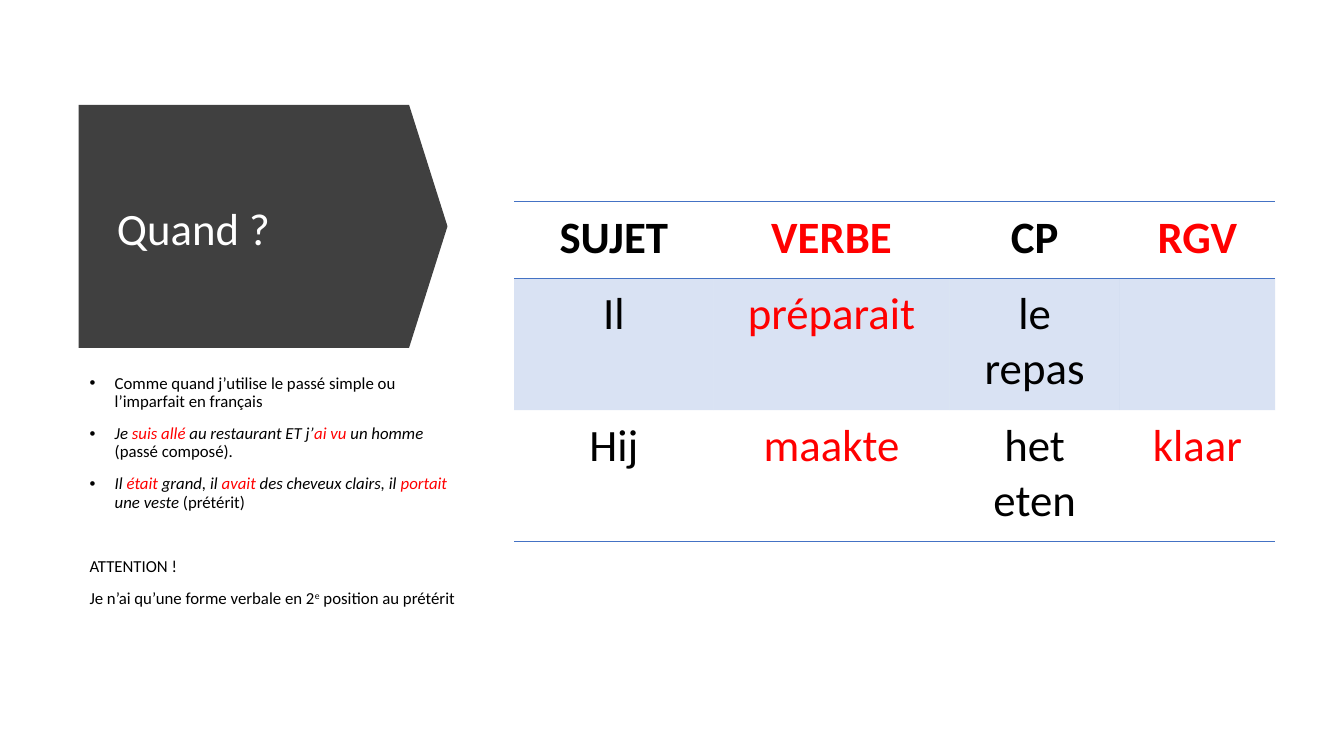
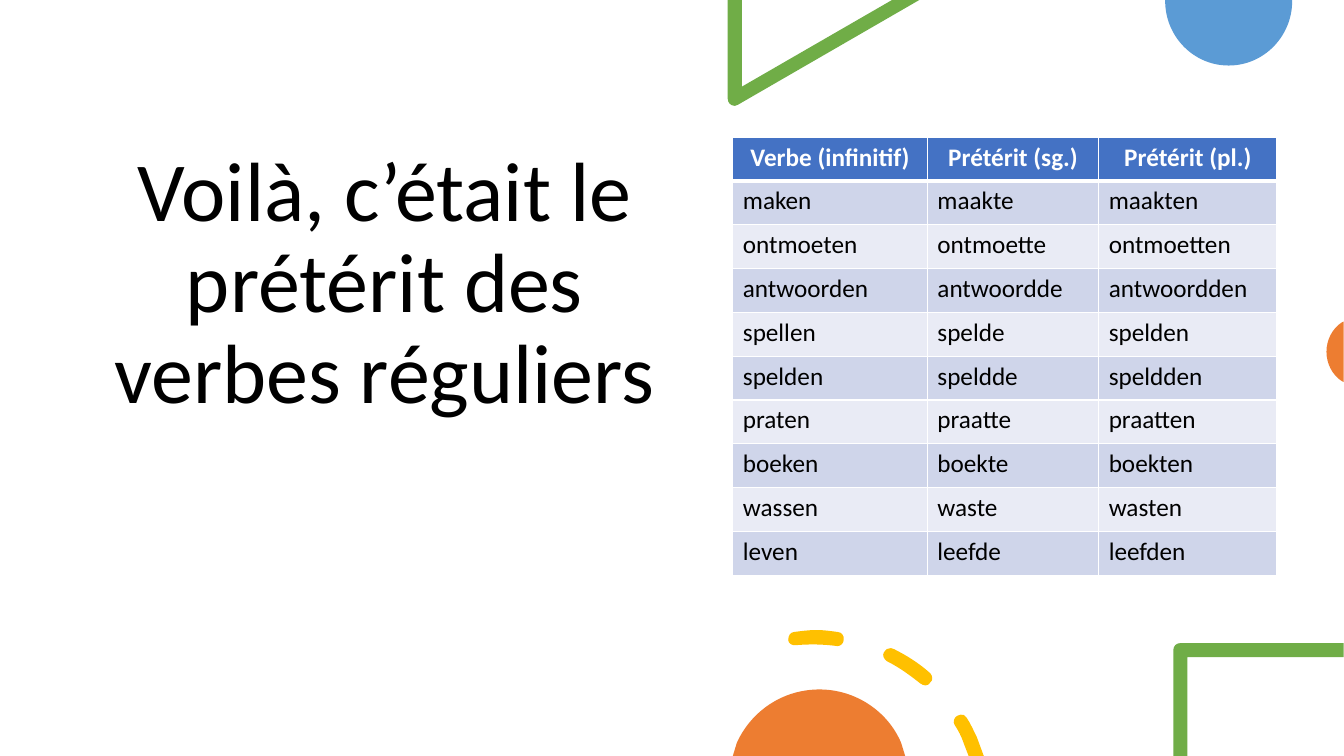
import lxml.etree
import pptx
import pptx.dml.color
import pptx.enum.shapes
import pptx.enum.text
import pptx.oxml.ns
import pptx.util

Inches = pptx.util.Inches
Pt = pptx.util.Pt
qn = pptx.oxml.ns.qn
ALIGN = pptx.enum.text.PP_ALIGN
ANCHOR = pptx.enum.text.MSO_ANCHOR

FONT = "Calibri"
COLORS = {
    "black": "000000",
    "white": "FFFFFF",
    "red": "FF0000",
    "charcoal": "404040",
    "blue": "4472C4",
    "dark band": "CFD5EA",
    "light band": "E9EBF5",
    "green": "70AD47",
    "sky": "5B9BD5",
    "orange": "ED7D31",
    "gold": "FFC000",
}
NO_TABLE_STYLE = "{2D5ABB26-0587-4C30-8999-92F81FD0307C}"

RULES = [
    [("Comme quand j’utilise le passé simple ou l’imparfait en français", "")],
    [("Je ", "i"), ("suis allé ", "ir"), ("au restaurant ET j’", "i"), ("ai vu ", "ir"),
     ("un homme ", "i"), ("(passé composé).", "")],
    [("Il ", "i"), ("était", "ir"), (" grand, il ", "i"), ("avait", "ir"),
     (" des cheveux clairs, il ", "i"), ("portait", "ir"), (" une veste ", "i"), ("(prétérit)", "")],
]
WARNING = [
    [("ATTENTION !", "")],
    [("Je n’ai qu’une forme verbale en 2", ""), ("e", "s"), (" position au prétérit", "")],
]
SENTENCES = [
    ["SUJET", "VERBE", "CP", "RGV"],
    ["Il", "préparait", "le repas", ""],
    ["Hij", "maakte", "het eten", "klaar"],
]
VERBS = [
    ["Verbe (infinitif)", "Prétérit (sg.)", "Prétérit (pl.)"],
    ["maken", "maakte", "maakten"],
    ["ontmoeten", "ontmoette", "ontmoetten"],
    ["antwoorden", "antwoordde", "antwoordden"],
    ["spellen", "spelde", "spelden"],
    ["spelden", "speldde", "speldden"],
    ["praten", "praatte", "praatten"],
    ["boeken", "boekte", "boekten"],
    ["wassen", "waste", "wasten"],
    ["leven", "leefde", "leefden"],
]

ORNAMENTS = [
    ("green", [[(7.22, 0), (7.36, 0), (7.36, 0.86), (8.85, 0), (9.12, 0), (7.32, 1.04),
                (7.31, 1.05, 7.3, 1.05, 7.29, 1.05), (7.25, 1.05, 7.22, 1.02, 7.22, 0.98)]]),
    ("sky", [[(11.56, 0), (12.82, 0), (12.82, 0.01), (12.82, 0.36, 12.54, 0.65, 12.19, 0.65),
              (11.84, 0.65, 11.56, 0.36, 11.56, 0.01)]]),
    ("orange", [[(13.33, 3.19), (13.33, 3.79), (13.31, 3.78),
                 (13.22, 3.72, 13.16, 3.61, 13.16, 3.49),
                 (13.16, 3.37, 13.22, 3.26, 13.31, 3.2)]]),
    ("gold", [
        [(9.53, 7.09), (9.55, 7.08, 9.58, 7.1, 9.59, 7.12), (9.63, 7.18, 9.66, 7.25, 9.69, 7.31),
         (9.76, 7.5), (9.61, 7.5), (9.56, 7.37), (9.54, 7.31, 9.51, 7.25, 9.47, 7.19),
         (9.45, 7.16, 9.47, 7.11, 9.5, 7.1), (9.51, 7.09, 9.52, 7.09, 9.53, 7.09)],
        [(8.84, 6.43), (8.85, 6.43, 8.86, 6.43, 8.87, 6.44), (8.99, 6.5, 9.12, 6.58, 9.23, 6.68),
         (9.25, 6.7, 9.26, 6.75, 9.23, 6.77), (9.22, 6.79, 9.2, 6.8, 9.18, 6.8),
         (9.16, 6.8, 9.15, 6.79, 9.13, 6.78), (9.03, 6.7, 8.92, 6.62, 8.8, 6.56),
         (8.77, 6.54, 8.75, 6.5, 8.77, 6.47), (8.78, 6.44, 8.81, 6.43, 8.84, 6.43)],
        [(8.1, 6.25), (8.17, 6.25, 8.24, 6.26, 8.31, 6.27), (8.35, 6.27, 8.38, 6.31, 8.37, 6.35),
         (8.37, 6.38, 8.34, 6.41, 8.31, 6.41), (8.16, 6.39, 8.03, 6.39, 7.9, 6.4),
         (7.86, 6.41, 7.82, 6.38, 7.82, 6.35), (7.82, 6.31, 7.84, 6.27, 7.88, 6.27),
         (7.95, 6.26, 8.03, 6.25, 8.1, 6.25)],
    ]),
    ("orange", [[(8.13, 6.84), (8.49, 6.84, 8.81, 7.06, 8.94, 7.37), (8.98, 7.5), (7.27, 7.5),
                 (7.31, 7.37), (7.45, 7.06, 7.76, 6.84, 8.13, 6.84)]]),
    ("green", [[(11.71, 6.38), (13.33, 6.38), (13.33, 6.52), (11.78, 6.52), (11.78, 7.5),
                (11.64, 7.5), (11.64, 6.45), (11.64, 6.41, 11.67, 6.38, 11.71, 6.38)]]),
]


def rgb(name):
    return pptx.dml.color.RGBColor.from_string(COLORS[name])


def paint(shape, color):
    shape.fill.solid()
    shape.fill.fore_color.rgb = rgb(color)
    shape.line.fill.background()
    shape.shadow.inherit = False


def add_run(paragraph, text, size, color="black", bold=False, italic=False):
    run = paragraph.add_run()
    run.text = text
    run.font.name = FONT
    run.font.size = Pt(size)
    run.font.color.rgb = rgb(color)
    run.font.bold = bold
    run.font.italic = italic
    return run


def add_title_slide(presentation):
    return presentation.slides.add_slide(presentation.slide_layouts[5])


def set_title(slide, text, box, size, color, align, anchor):
    title = slide.shapes.title
    title.left, title.top, title.width, title.height = map(Inches, box)
    frame = title.text_frame
    frame.word_wrap = True
    frame.auto_size = pptx.enum.text.MSO_AUTO_SIZE.NONE
    frame.vertical_anchor = anchor
    paragraph = frame.paragraphs[0]
    paragraph.alignment = align
    paragraph.line_spacing = 0.9
    add_run(paragraph, text, size, color)


def add_arrow_panel(slide):
    panel = slide.shapes.add_shape(
        pptx.enum.shapes.MSO_SHAPE.PENTAGON,
        Inches(0.78), Inches(1.04), Inches(3.66), Inches(2.41))
    panel.adjustments[0] = 0.158
    paint(panel, "charcoal")
    slide.shapes.title.element.addprevious(panel.element)


def set_bullet(paragraph):
    properties = paragraph._p.get_or_add_pPr()
    properties.set("marL", str(Inches(0.25)))
    properties.set("indent", str(-Inches(0.25)))
    lxml.etree.SubElement(properties, qn("a:buFont"), typeface="Arial")
    lxml.etree.SubElement(properties, qn("a:buChar"), char="•")


def add_rules_text(slide, box):
    frame = slide.shapes.add_textbox(*map(Inches, box)).text_frame
    frame.word_wrap = True
    for index, parts in enumerate(RULES + WARNING):
        paragraph = frame.add_paragraph() if index else frame.paragraphs[0]
        paragraph.line_spacing = 0.9
        paragraph.space_before = Pt(33 if index == len(RULES) else 10)
        if index < len(RULES):
            set_bullet(paragraph)
        for text, style in parts:
            run = add_run(paragraph, text, 12, "red" if "r" in style else "black",
                          italic="i" in style)
            if "s" in style:
                run.font._element.set("baseline", "30000")


def add_plain_table(slide, left, top, widths, heights):
    frame = slide.shapes.add_table(
        len(heights), len(widths), Inches(left), Inches(top),
        Inches(sum(widths)), Inches(sum(heights)))
    table = frame.table
    table.first_row = table.horz_banding = False
    next(frame.element.iter(qn("a:tableStyleId"))).text = NO_TABLE_STYLE
    for column, width in zip(table.columns, widths):
        column.width = Inches(width)
    for row, height in zip(table.rows, heights):
        row.height = Inches(height)
    return table


def set_borders(cell, color, widths):
    properties = cell._tc.get_or_add_tcPr()
    for side in "LRTB":
        if side in widths:
            line = lxml.etree.SubElement(properties, qn("a:ln" + side), w=str(Pt(widths[side])))
            fill = lxml.etree.SubElement(line, qn("a:solidFill"))
            lxml.etree.SubElement(fill, qn("a:srgbClr"), val=COLORS[color])


def set_opacity(cell, percent):
    fill = cell._tc.get_or_add_tcPr().find(qn("a:solidFill"))
    lxml.etree.SubElement(fill[0], qn("a:alpha"), val=str(percent * 1000))


def fill_cell(cell, text, size, color, bold, align, background, margins):
    cell.margin_left = cell.margin_right = Inches(margins[0])
    cell.margin_top = cell.margin_bottom = Inches(margins[1])
    if background:
        cell.fill.solid()
        cell.fill.fore_color.rgb = rgb(background)
    else:
        cell.fill.background()
    if text:
        paragraph = cell.text_frame.paragraphs[0]
        paragraph.alignment = align
        add_run(paragraph, text, size, color, bold)


def add_sentence_table(slide):
    table = add_plain_table(slide, 5.1, 2, [1.98, 2.34, 1.69, 1.54], [0.76, 1.31, 1.3])
    borders = [{"T": 1, "B": 1}, {}, {"B": 1}]
    for row, texts in enumerate(SENTENCES):
        for column, text in enumerate(texts):
            cell = table.cell(row, column)
            set_borders(cell, "blue", borders[row])
            fill_cell(cell, text, 32, "red" if column % 2 else "black", row == 0,
                      ALIGN.CENTER, "blue" if row == 1 else None, (0.18, 0.09))
            if row == 1:
                set_opacity(cell, 20)


def add_verb_table(slide):
    row_height = 4.35 / len(VERBS)
    table = add_plain_table(slide, 7.27, 1.36, [1.93, 1.7, 1.77], [row_height] * len(VERBS))
    for row, texts in enumerate(VERBS):
        header = row == 0
        band = "blue" if header else "dark band" if row % 2 else "light band"
        borders = {"L": 1, "R": 1, "T": 1, "B": 3 if header else 1}
        for column, text in enumerate(texts):
            cell = table.cell(row, column)
            set_borders(cell, "white", borders)
            fill_cell(cell, text, 18, "white" if header else "black", header,
                      ALIGN.CENTER if header else ALIGN.LEFT, band, (0.1, 0.05))


def list_points(outline):
    return [(Inches(segment[index]), Inches(segment[index + 1]))
            for segment in outline for index in range(0, len(segment), 2)]


def bend_curves(shape, outlines):
    lines = iter(list(shape.element.iter(qn("a:lnTo"))))
    for outline in outlines:
        for segment in outline[1:]:
            steps = [next(lines) for _ in range(len(segment) // 2)]
            if len(steps) == 3:
                outline_path = steps[0].getparent()
                curve = lxml.etree.SubElement(outline_path, qn("a:cubicBezTo"))
                steps[0].addprevious(curve)
                for step in steps:
                    curve.append(step[0])
                    outline_path.remove(step)


def add_ornament(slide, color, outlines):
    contours = [list_points(outline) for outline in outlines]
    builder = slide.shapes.build_freeform(*contours[0][0])
    for index, points in enumerate(contours):
        if index:
            builder.move_to(*points[0])
        builder.add_line_segments(points[1:], close=True)
    shape = builder.convert_to_shape()
    bend_curves(shape, outlines)
    paint(shape, color)


def build_when_slide(presentation):
    slide = add_title_slide(presentation)
    add_arrow_panel(slide)
    set_title(slide, "Quand ?", (1.06, 1.32, 2.92, 1.95), 32, "white", ALIGN.LEFT, ANCHOR.MIDDLE)
    add_rules_text(slide, (0.79, 3.67, 3.93, 2.65))
    add_sentence_table(slide)


def build_summary_slide(presentation):
    slide = add_title_slide(presentation)
    set_title(slide, "Voilà, c’était le prétérit des verbes réguliers",
              (0.96, 0.87, 5.71, 3.36), 60, "black", ALIGN.CENTER, ANCHOR.BOTTOM)
    for color, outlines in ORNAMENTS:
        add_ornament(slide, color, outlines)
    add_verb_table(slide)


def main():
    presentation = pptx.Presentation()
    presentation.slide_width = Pt(960)
    presentation.slide_height = Pt(540)
    build_when_slide(presentation)
    build_summary_slide(presentation)
    presentation.save("out.pptx")


if __name__ == "__main__":
    main()
